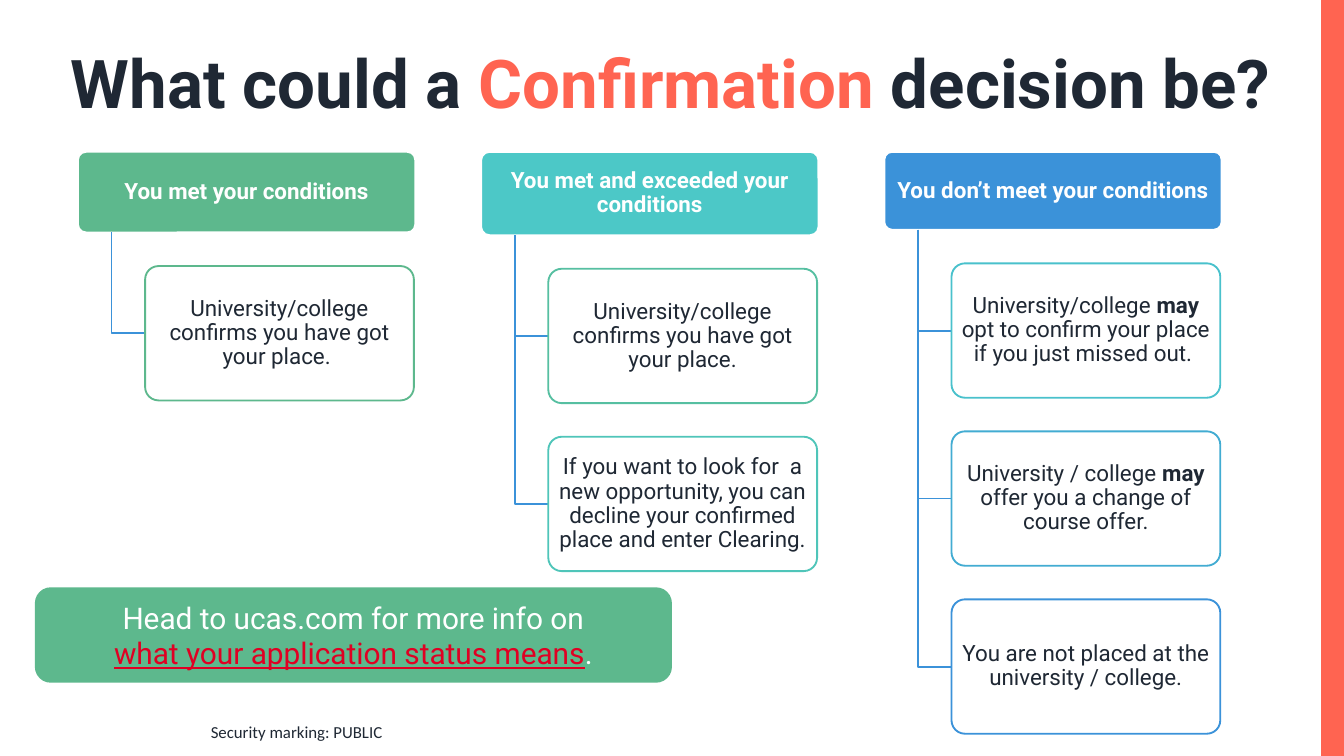
from lxml.etree import SubElement
from pptx import Presentation
from pptx.dml.color import RGBColor
from pptx.enum.shapes import MSO_SHAPE
from pptx.enum.text import MSO_ANCHOR, PP_ALIGN
from pptx.oxml.ns import qn
from pptx.util import Inches, Pt

WIDTH = 10
HEIGHT = WIDTH * 9 / 16
DARK, WHITE, CORAL, RED = "1F2834", "FFFFFF", "FF6451", "E00023"
GREEN, TEAL, BLUE = "5DB88D", "4CC8C7", "3B92D9"

COLUMN_LEFT, COLUMN_TOP, COLUMN_PITCH = 0.58, 1.13, 3
HEADER_WIDTH, CARD_WIDTH, CARD_HEIGHT = 2.51, 2, 1
GAP = 0.25  # header to card, card to card, and both steps of the elbow

# Header text, colour and height, then cards as (line colour, runs);
# a run is (text, bold).
COLUMNS = [
    ("You met your conditions", GREEN, 0.6, [
        (GREEN, [("University/college confirms you have got your place. ", False)]),
    ]),
    ("You met and exceeded your conditions", TEAL, 0.62, [
        ("56BFA1", [("University/college confirms you have got your place.", False)]),
        ("4FC5B9", [("If you want to look for  a new opportunity, you can decline "
                     "your confirmed place and enter Clearing.", False)]),
    ]),
    ("You don’t meet your conditions", BLUE, 0.58, [
        ("49C1CC", [("University/college ", False), ("may", True),
                    (" opt to confirm your place if you just missed out. ", False)]),
        ("42ACD2", [("University / college ", False), ("may", True),
                    (" offer you a change of course offer.", False)]),
        (BLUE, [("You are not placed at the university / college.", False)]),
    ]),
]


def rgb(color):
    return RGBColor.from_string(color)


def add_run(p, text, size, color, bold=False, underline=False, font="Roboto"):
    r = p.add_run()
    r.text = text
    r.font.name = font
    r.font.size = Pt(size)
    r.font.bold = bold
    r.font.underline = underline
    r.font.color.rgb = rgb(color)


def add_box(s, shape_type, left, top, width, height, fill, line=None):
    sp = s.shapes.add_shape(shape_type, Inches(left), Inches(top),
                            Inches(width), Inches(height))
    sp.shadow.inherit = False
    sp.fill.solid()
    sp.fill.fore_color.rgb = rgb(fill)
    if line:
        sp.line.color.rgb = rgb(line)
        sp.line.width = Pt(1)
    else:
        sp.line.fill.background()
    sp.text_frame.vertical_anchor = MSO_ANCHOR.MIDDLE
    return sp


def add_node(s, left, top, width, height, fill, line, runs, color):
    """Add a rounded box of the diagram with its centred text."""
    sp = add_box(s, MSO_SHAPE.ROUNDED_RECTANGLE, left, top, width, height, fill, line)
    sp.adjustments[0] = 0.1
    tf = sp.text_frame
    tf.word_wrap = True
    tf.margin_left = tf.margin_right = Inches(0.03)
    tf.margin_top = tf.margin_bottom = Inches(0.02)
    p = tf.paragraphs[0]
    p.alignment = PP_ALIGN.CENTER
    p.line_spacing = 0.9
    for text, bold in runs:
        add_run(p, text, 12, color, bold)
    return sp


def set_opacity(sp, percent):
    color = sp.fill._xPr.find(qn("a:solidFill"))[0]
    SubElement(color, qn("a:alpha")).set("val", str(percent * 1000))


def add_elbow(s, left, top, bottom):
    builder = s.shapes.build_freeform(Inches(left), Inches(top))
    builder.add_line_segments([(Inches(left), Inches(bottom)),
                               (Inches(left + GAP), Inches(bottom))], close=False)
    sp = builder.convert_to_shape()
    sp.shadow.inherit = False
    sp.fill.background()
    sp.line.color.rgb = rgb(BLUE)
    sp.line.width = Pt(1)


def add_column(s, left, header, color, header_height, cards):
    add_node(s, left, COLUMN_TOP, HEADER_WIDTH, header_height, color, WHITE,
             [(header, True)], WHITE)
    bottom = COLUMN_TOP + header_height
    for i, (line, runs) in enumerate(cards):
        top = bottom + GAP + i * (CARD_HEIGHT + GAP)
        add_elbow(s, left + GAP, bottom, top + CARD_HEIGHT / 2)
        card = add_node(s, left + 2 * GAP, top, CARD_WIDTH, CARD_HEIGHT,
                        WHITE, line, runs, DARK)
        set_opacity(card, 90)


def add_text(s, left, top, width, height, anchor=MSO_ANCHOR.TOP):
    """Add an empty text box and return its first paragraph."""
    tf = s.shapes.add_textbox(Inches(left), Inches(top),
                              Inches(width), Inches(height)).text_frame
    tf.word_wrap = True
    tf.vertical_anchor = anchor
    return tf.paragraphs[0]


def add_callout(s):
    sp = add_box(s, MSO_SHAPE.ROUNDED_RECTANGLE, 0.26, 4.37, 4.74, 0.71, GREEN)
    tf = sp.text_frame
    tf.word_wrap = True
    intro, link = tf.paragraphs[0], tf.add_paragraph()
    intro.alignment = link.alignment = PP_ALIGN.CENTER
    add_run(intro, "Head to ucas.com for more info on", 16, WHITE)
    add_run(link, "what your application status means", 16, RED, underline=True)
    add_run(link, ".", 16, WHITE)


def main():
    prs = Presentation()
    prs.slide_width, prs.slide_height = Inches(WIDTH), Inches(HEIGHT)
    s = prs.slides.add_slide(prs.slide_layouts[6])

    add_box(s, MSO_SHAPE.RECTANGLE, WIDTH - 0.17, 0, 0.17, HEIGHT, CORAL)

    title = add_text(s, 0.43, 0.26, 9.33, 0.71)
    add_run(title, "What could a ", 36, DARK, bold=True)
    add_run(title, "Confirmation ", 36, CORAL, bold=True)
    add_run(title, "decision be?", 36, DARK, bold=True)

    for i, column in enumerate(COLUMNS):
        add_column(s, COLUMN_LEFT + i * COLUMN_PITCH, *column)

    marking = add_text(s, 1.47, 5.32, 4.9, 0.25, MSO_ANCHOR.MIDDLE)
    add_run(marking, "Security marking: PUBLIC", 9, DARK, font="Calibri")

    add_callout(s)
    prs.save("out.pptx")


if __name__ == "__main__":
    main()
